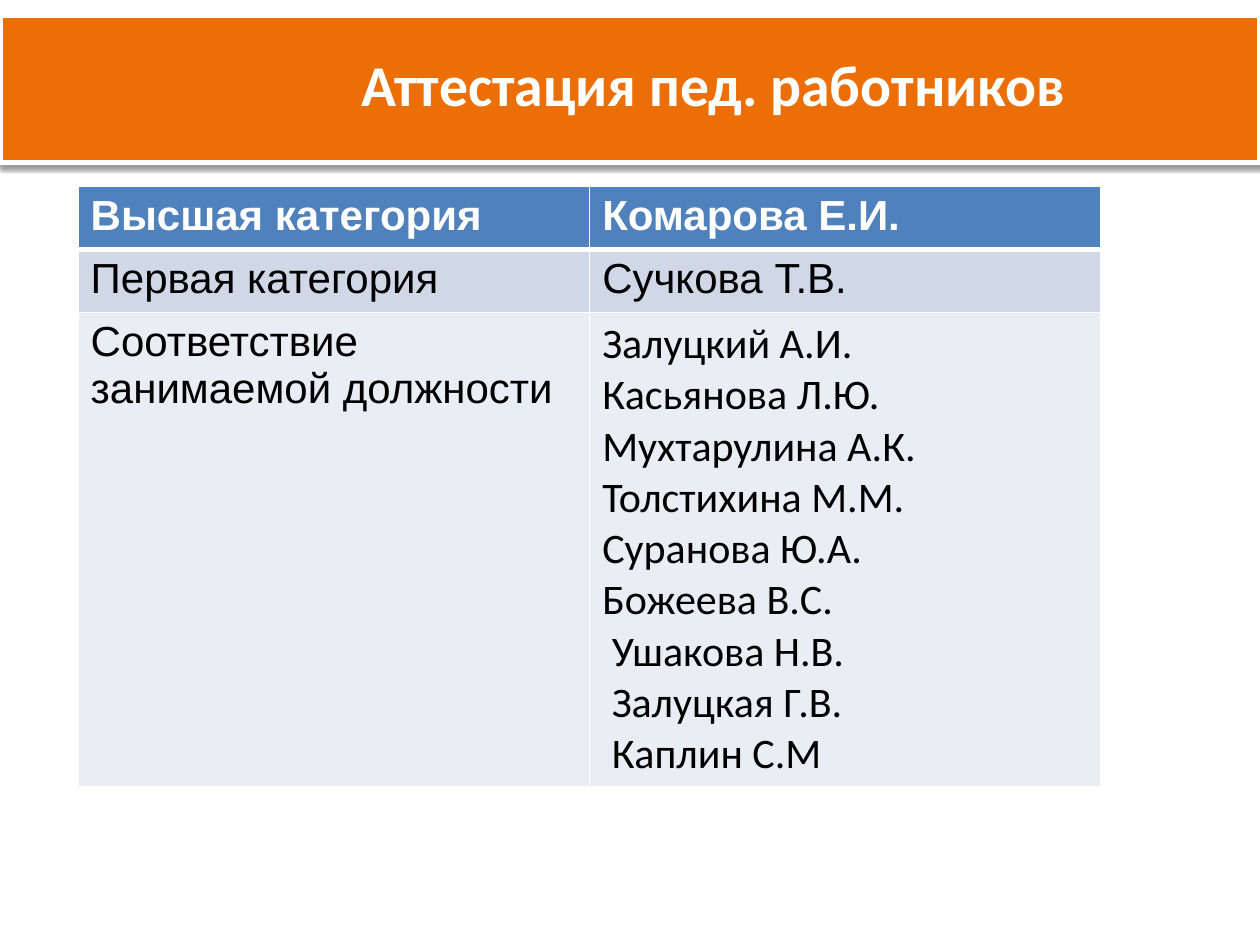
from lxml.etree import SubElement
from pptx import Presentation
from pptx.dml.color import RGBColor
from pptx.enum.shapes import MSO_SHAPE as Shape
from pptx.enum.text import MSO_ANCHOR as Anchor, PP_ALIGN as Align
from pptx.oxml.ns import qn
from pptx.util import Inches, Pt

COLORS = {
    "banner": "EB6E07",
    "white": "FFFFFF",
    "black": "000000",
    "header": "4F81BD",
    "band": "D0D8E8",
    "light": "E9EDF4",
}

STAFF = [
    "Залуцкий А.И.",
    "Касьянова Л.Ю.",
    "Мухтарулина А.К.",
    "Толстихина М.М.",
    "Суранова Ю.А.",
    "Божеева В.С.",
    " Ушакова Н.В.",
    " Залуцкая Г.В.",
    " Каплин С.М",
]

CATEGORIES = [
    ("Высшая категория", ["Комарова Е.И."], 0.46, "header", "Arial"),
    ("Первая категория", ["Сучкова Т.В."], 0.47, "band", "Arial"),
    ("Соответствие занимаемой должности", STAFF, 3.76, "light", "Calibri"),
]


class SlideBuilder:
    def __init__(self, slide):
        self.slide = slide

    def color(self, name):
        return RGBColor.from_string(COLORS[name])

    def set_text(self, frame, lines, font, size, color, bold=False, align=None):
        frame.word_wrap = True
        frame.text = "\n".join(lines)
        for paragraph in frame.paragraphs:
            paragraph.alignment = align
            paragraph.font.name = font
            paragraph.font.size = Pt(size)
            paragraph.font.bold = bold
            paragraph.font.color.rgb = self.color(color)

    def banner(self, left, top, width, height):
        banner = self.slide.shapes.add_shape(
            Shape.RECTANGLE, Inches(left), Inches(top), Inches(width), Inches(height))
        banner.fill.solid()
        banner.fill.fore_color.rgb = self.color("banner")
        banner.line.color.rgb = self.color("white")
        banner.line.width = Pt(3)
        banner.shadow.inherit = False
        effects = banner.element.spPr.find(qn("a:effectLst"))
        shadow = SubElement(effects, qn("a:outerShdw"), blurRad=str(Pt(3.1)),
                            dist=str(Pt(1.6)), dir="5400000", rotWithShape="0")
        tint = SubElement(shadow, qn("a:srgbClr"), val=COLORS["black"])
        SubElement(tint, qn("a:alpha"), val="38000")

    def title(self, text, left, top, width, height):
        title = self.slide.shapes.add_textbox(
            Inches(left), Inches(top), Inches(width), Inches(height))
        title.text_frame.vertical_anchor = Anchor.MIDDLE
        self.set_text(title.text_frame, [text], "Calibri", 33, "white", True, Align.CENTER)

    def borders(self, cell, widths):
        properties = cell._tc.get_or_add_tcPr()
        for side, width in widths.items():
            line = SubElement(properties, qn(f"a:ln{side}"), w=str(Pt(width)))
            fill = SubElement(line, qn("a:solidFill"))
            SubElement(fill, qn("a:srgbClr"), val=COLORS["white"])

    def table(self, rows, left, top, width):
        height = sum(row[2] for row in rows)
        table = self.slide.shapes.add_table(
            len(rows), 2, Inches(left), Inches(top), Inches(width), Inches(height)).table
        table.horz_banding = False
        for index, (category, names, row_height, fill, names_font) in enumerate(rows):
            table.rows[index].height = Inches(row_height)
            is_header = index == 0
            widths = {"L": 1, "R": 1, "T": 3 if index == 1 else 1, "B": 3 if is_header else 1}
            contents = [([category], "Arial"), (names, names_font)]
            for cell, (lines, font) in zip(table.rows[index].cells, contents):
                self.borders(cell, widths)
                cell.fill.solid()
                cell.fill.fore_color.rgb = self.color(fill)
                self.set_text(cell.text_frame, lines, font, 24,
                              "white" if is_header else "black", is_header)


def main():
    presentation = Presentation()
    presentation.slide_width = Inches(10)
    presentation.slide_height = Inches(7.5)
    builder = SlideBuilder(presentation.slides.add_slide(presentation.slide_layouts[6]))
    builder.banner(0, 0.12, 10, 1.17)
    builder.title("Аттестация пед. работников", 1.33, 0.06, 8.67, 1.2)
    builder.table(CATEGORIES, 0.62, 1.48, 8.12)
    presentation.save("out.pptx")


if __name__ == "__main__":
    main()
